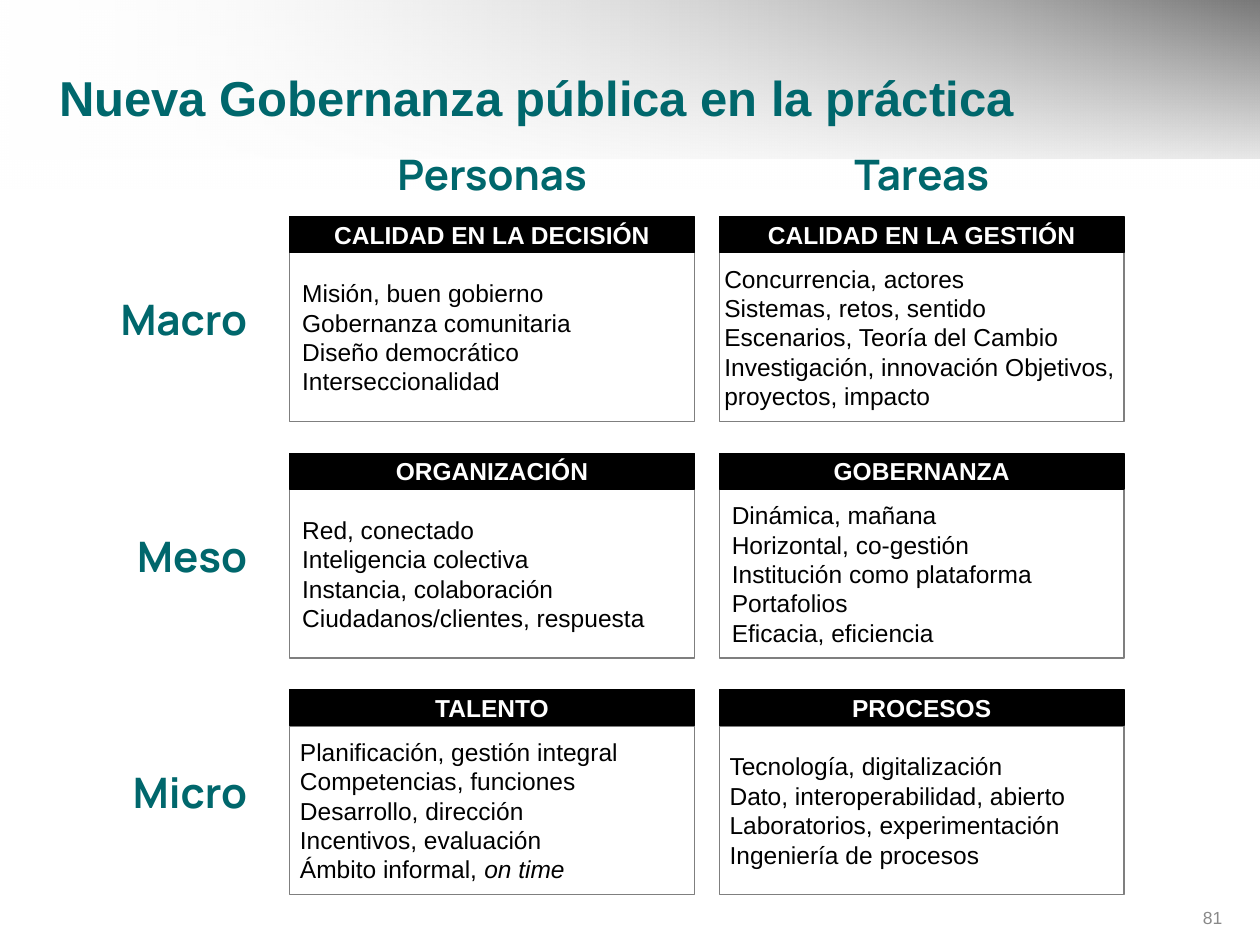
from dataclasses import dataclass

from lxml.etree import SubElement
from pptx import Presentation
from pptx.dml.color import RGBColor
from pptx.enum.shapes import MSO_SHAPE
from pptx.enum.text import MSO_ANCHOR, MSO_AUTO_SIZE, PP_ALIGN
from pptx.oxml.ns import qn
from pptx.util import Pt


@dataclass(frozen=True)
class Theme:
    font: str = "Arial"
    accent: str = "Manrope"
    teal: str = "00676C"
    black: str = "000000"
    white: str = "FFFFFF"
    edge: str = "7F7F7F"
    muted: str = "898989"
    title: int = 28
    label: int = 24
    body: int = 14
    small: int = 10


class Deck:
    def __init__(self, theme):
        self.theme = theme
        self.file = Presentation()
        self.file.slide_width, self.file.slide_height = Pt(720), Pt(540)
        self.slide = self.file.slides.add_slide(self.file.slide_layouts[5])

    def put(self, frame, lines, size, color, font=None, bold=False,
            align=PP_ALIGN.LEFT, anchor=MSO_ANCHOR.MIDDLE, inset=7.2):
        """Fill a frame; each line is a string or a list of (text, italic) runs."""
        frame.word_wrap = True
        frame.auto_size = MSO_AUTO_SIZE.NONE
        frame.vertical_anchor = anchor
        frame.margin_left = frame.margin_right = Pt(inset)
        frame.margin_top = frame.margin_bottom = Pt(3.6)
        for i, line in enumerate(lines):
            para = frame.add_paragraph() if i else frame.paragraphs[0]
            para.alignment = align
            for text, italic in [(line, False)] if isinstance(line, str) else line:
                run = para.add_run()
                run.text = text
                run.font.name = font or self.theme.font
                run.font.size = Pt(size)
                run.font.bold = bold
                run.font.italic = italic
                run.font.color.rgb = RGBColor.from_string(color)

    def fade(self, height, colors, alpha, angle):
        """Add a full-width gradient band whose first stop has the given opacity."""
        band = self.slide.shapes.add_shape(
            MSO_SHAPE.RECTANGLE, 0, 0, self.file.slide_width, Pt(height))
        band.shadow.inherit = False
        band.line.fill.background()
        band.fill.gradient()
        band.fill.gradient_angle = angle
        for stop, color in zip(band.fill.gradient_stops, colors):
            stop.color.rgb = RGBColor.from_string(color)
        first = next(band.element.spPr.iter(qn("a:srgbClr")))
        SubElement(first, qn("a:alpha")).set("val", str(alpha * 1000))

    def title(self, text, x, y, w, h):
        shape = self.slide.shapes.title
        shape.left, shape.top, shape.width, shape.height = map(Pt, (x, y, w, h))
        self.put(shape.text_frame, [text], self.theme.title, self.theme.teal, bold=True)
        self.slide.shapes.element.append(shape.element)  # in front of the bands

    def text(self, text, x, y, w, h, size, color, align, **style):
        box = self.slide.shapes.add_textbox(*map(Pt, (x, y, w, h)))
        self.put(box.text_frame, [text], size, color, align=align, **style)

    def label(self, text, x, y, w, align):
        self.text(text, x, y, w, 36, self.theme.label, self.theme.teal, align,
                  font=self.theme.accent, bold=True, anchor=MSO_ANCHOR.TOP)

    def rect(self, shapes, x, y, w, h, fill, line):
        box = shapes.add_shape(MSO_SHAPE.RECTANGLE, *map(Pt, (x, y, w, h)))
        box.shadow.inherit = False
        box.fill.solid()
        box.fill.fore_color.rgb = RGBColor.from_string(fill)
        box.line.color.rgb = RGBColor.from_string(line)
        box.line.width = Pt(0)
        return box.text_frame

    def card(self, x, y, w, head, lines, inset):
        t = self.theme
        shapes = self.slide.shapes.add_group_shape().shapes
        body = self.rect(shapes, x, y + 20.6, w, 96.4, t.white, t.edge)
        self.put(body, lines, t.body, t.black, inset=inset)
        bar = self.rect(shapes, x, y, w, 20.4, t.black, t.black)
        self.put(bar, [head], t.body, t.white, bold=True, align=PP_ALIGN.CENTER)


COLS = [("Personas", 165.6), ("Tareas", 411.1)]
WIDTH, TOP, STEP = 231.2, 123.8, 135.2
ROWS = [
    ("Macro", [
        ("CALIDAD EN LA DECISIÓN", 7.2,
         ["Misión, buen gobierno", "Gobernanza comunitaria",
          "Diseño democrático", "Interseccionalidad"]),
        ("CALIDAD EN LA GESTIÓN", 2.8,
         ["Concurrencia, actores", "Sistemas, retos, sentido",
          "Escenarios, Teoría del Cambio",
          "Investigación, innovación Objetivos, proyectos, impacto"]),
    ]),
    ("Meso", [
        ("ORGANIZACIÓN", 7.2,
         ["Red, conectado", "Inteligencia colectiva",
          "Instancia, colaboración", "Ciudadanos/clientes, respuesta"]),
        ("GOBERNANZA", 7.2,
         ["Dinámica, mañana", "Horizontal, co-gestión",
          "Institución como plataforma", "Portafolios", "Eficacia, eficiencia"]),
    ]),
    ("Micro", [
        ("TALENTO", 5.8,
         ["Planificación, gestión integral", "Competencias, funciones",
          "Desarrollo, dirección", "Incentivos, evaluación",
          [("Ámbito informal, ", False), ("on time", True)]]),
        ("PROCESOS", 5.8,
         ["Tecnología, digitalización", "Dato, interoperabilidad, abierto",
          "Laboratorios, experimentación", "Ingeniería de procesos"]),
    ]),
]


def main():
    t = Theme()
    deck = Deck(t)
    deck.fade(90.7, (t.white, t.black), 0, 0)
    deck.fade(108, (t.white, t.white), 47, 270)
    deck.text("81", 660.2, 514, 45.4, 20.9, t.small, t.muted, PP_ALIGN.RIGHT)
    deck.title("Nueva Gobernanza pública en la práctica", 26.6, 32.4, 662.4, 45.4)
    for name, x in COLS:
        deck.label(name, x, 81.4, WIDTH, PP_ALIGN.CENTER)
    for i, (name, cards) in enumerate(ROWS):
        y = TOP + i * STEP
        deck.label(name, 14.4, y + 40.4, 133.9, PP_ALIGN.RIGHT)
        for (_, x), (head, inset, lines) in zip(COLS, cards):
            deck.card(x, y, WIDTH, head, lines, inset)
    deck.file.save("out.pptx")


if __name__ == "__main__":
    main()
